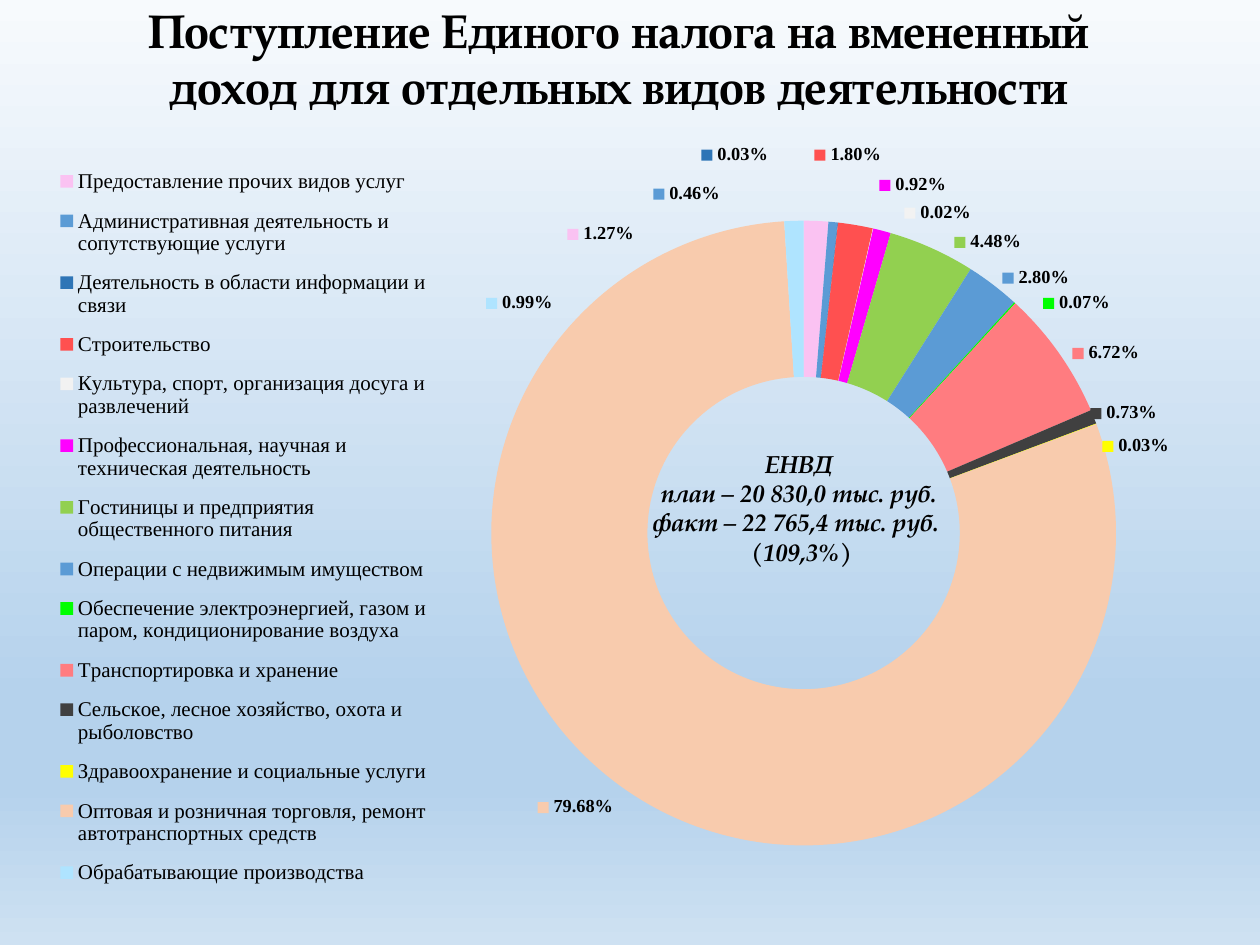
import copy
import math
import pptx
import pptx.chart.data
import pptx.dml.color
import pptx.enum.chart
import pptx.enum.text
import pptx.oxml
import pptx.oxml.ns
import pptx.util
from pptx.util import Cm

qn = pptx.oxml.ns.qn
SERIF = "Times New Roman"
HEAD = "TeX Gyre Pagella"


def tint(code):
    return pptx.dml.color.RGBColor.from_string(code)


def write(frame, text, size=14, font=HEAD, color="000000", bold=True, italic=False):
    frame.word_wrap = True
    frame.text = text
    for para in frame.paragraphs:
        para.alignment = pptx.enum.text.PP_ALIGN.CENTER
        para.line_spacing = 1.0
        for run in para.runs:
            run.font.size = pptx.util.Pt(size)
            run.font.name = font
            run.font.bold = bold
            run.font.italic = italic
            run.font.color.rgb = tint(color)


deck = pptx.Presentation()
deck.slide_width, deck.slide_height = Cm(25.4), Cm(19.05)
slide = deck.slides.add_slide(deck.slide_layouts[5])

# Background gradient, top to bottom
fill = slide.background.fill
fill.gradient()
fill.gradient_angle = 270
stops = slide.element.find(".//" + qn("a:gsLst"))
for stop in list(stops):
    stops.remove(stop)
for pos, code in [(0, "F7FAFD"), (74, "B5D2EC"), (83, "B5D2EC"), (100, "CEE1F2")]:
    stop = pptx.oxml.parse_xml(
        f'<a:gs {pptx.oxml.ns.nsdecls("a")} pos="{pos * 1000}">'
        f'<a:srgbClr val="{code}"/></a:gs>')
    stops.append(stop)

# Title
title = slide.shapes.title
title.left, title.top, title.width, title.height = Cm(1.52), Cm(0.18), Cm(21.92), Cm(1.96)
write(title.text_frame, "Поступление Единого налога на вмененный доход "
      "для отдельных видов деятельности", size=27)
title.text_frame.auto_size = pptx.enum.text.MSO_AUTO_SIZE.NONE
title.text_frame.vertical_anchor = pptx.enum.text.MSO_ANCHOR.MIDDLE

# Branch, share, colour, centre of the label on the slide in cm
rows = [
    ("Предоставление прочих видов услуг", 1.27, "FAC2F2", 12.1, 4.72),
    ("Административная деятельность и сопутствующие услуги", 0.46, "5B9BD5", 13.83, 3.91),
    ("Деятельность в области информации и связи", 0.03, "2E75B6", 14.8, 3.12),
    ("Строительство", 1.8, "FF5050", 17.08, 3.12),
    ("Культура, спорт, организация досуга и развлечений", 0.02, "F2F2F2", 18.89, 4.29),
    ("Профессиональная, научная и техническая деятельность", 0.92, "FF00FF", 18.39, 3.73),
    ("Гостиницы и предприятия общественного питания", 4.48, "92D050", 19.9, 4.88),
    ("Операции с недвижимым имуществом", 2.8, "5B9BD5", 20.87, 5.6),
    ("Обеспечение электроэнергией, газом и паром, кондиционирование воздуха",
     0.07, "00FF00", 21.69, 6.11),
    ("Транспортировка и хранение", 6.72, "FF7C80", 22.28, 7.12),
    ("Сельское, лесное хозяйство, охота и рыболовство", 0.73, "404040", 22.64, 8.33),
    ("Здравоохранение и социальные услуги", 0.03, "FFFF00", 22.88, 8.99),
    ("Оптовая и розничная торговля, ремонт автотранспортных средств",
     79.68, "F8CBAD", 11.59, 16.27),
    ("Обрабатывающие производства", 0.99, "AFE4FF", 10.46, 6.11),
]

# Doughnut chart
wide, high = 24.0, 16.21
data = pptx.chart.data.CategoryChartData()
data.categories = [row[0] for row in rows]
data.add_series("Series 1", [row[1] for row in rows])
chart = slide.shapes.add_chart(
    pptx.enum.chart.XL_CHART_TYPE.DOUGHNUT,
    Cm(0.71), Cm(2.44), Cm(wide), Cm(high), data).chart
chart.has_title = False
chart.font.name = "Calibri"
chart.font.size = pptx.util.Pt(18)
chart.font.color.rgb = tint("000000")
chart.has_legend = True
legend = chart.legend
legend.position = pptx.enum.chart.XL_LEGEND_POSITION.LEFT
legend.include_in_layout = False
legend.font.name = SERIF
legend.font.size = pptx.util.Pt(12)
legend.font.color.rgb = tint("000000")
plot = chart.plots[0]
plot.vary_by_categories = True
plot._element.find(qn("c:holeSize")).set("val", "50")


def layout(**parts):
    tags = "".join(f'<c:{key} val="{val}"/>' for key, val in parts.items())
    return pptx.oxml.parse_xml(
        f'<c:layout {pptx.oxml.ns.nsdecls("c")}><c:manualLayout>{tags}'
        '</c:manualLayout></c:layout>')


# Fixed places of the ring and the legend
area = chart._chartSpace.find(".//" + qn("c:plotArea"))
for old in area.findall(qn("c:layout")):
    area.remove(old)
area.insert(0, layout(layoutTarget="inner", xMode="edge", yMode="edge",
                      x=0.383, y=0.124, w=0.525, h=0.777))
box = legend._element
for old in box.findall(qn("c:layout")):
    box.remove(old)
box.find(qn("c:legendPos")).addnext(
    layout(xMode="edge", yMode="edge", x=0.01, y=0.04, w=0.33, h=0.93))

# Percent labels with legend keys
ring = plot.series[0]
labels = ring.data_labels
labels.show_percentage = True
labels.show_value = False
labels.show_legend_key = True
labels.number_format = "0.00%"
labels.number_format_is_linked = False
labels.font.name = SERIF
labels.font.size = pptx.util.Pt(10.5)
labels.font.bold = True
labels.font.color.rgb = tint("000000")
group = labels._element
lines = group.find(qn("c:showLeaderLines"))
if lines is not None:
    lines.set("val", "0")
shared = [part for part in group if part is not lines]

# Slice colours, and each label moved from mid-ring to its place
mid_x, mid_y, reach = 16.19, 10.75, 4.72
total = sum(row[1] for row in rows)
done = 0
for num, (name, share, code, x, y) in enumerate(rows):
    point = ring.points[num].format
    point.fill.solid()
    point.fill.fore_color.rgb = tint(code)
    point.line.fill.background()
    turn = 2 * math.pi * (done + share / 2) / total
    done += share
    label = pptx.oxml.parse_xml(
        f'<c:dLbl {pptx.oxml.ns.nsdecls("c")}><c:idx val="{num}"/></c:dLbl>')
    label.append(layout(x=round((x - mid_x - reach * math.sin(turn)) / wide, 4),
                        y=round((y - mid_y + reach * math.cos(turn)) / high, 4)))
    for part in shared:
        label.append(copy.deepcopy(part))
    group.insert(num, label)

# Plan and fact in the middle of the ring
note = slide.shapes.add_textbox(Cm(12.9), Cm(8.92), Cm(6.4), Cm(3.25))
write(note.text_frame, "ЕНВД\nплан – 20 830,0 тыс. руб.\n"
      "факт – 22 765,4 тыс. руб. \n (109,3%)", italic=True)

deck.save("out.pptx")
